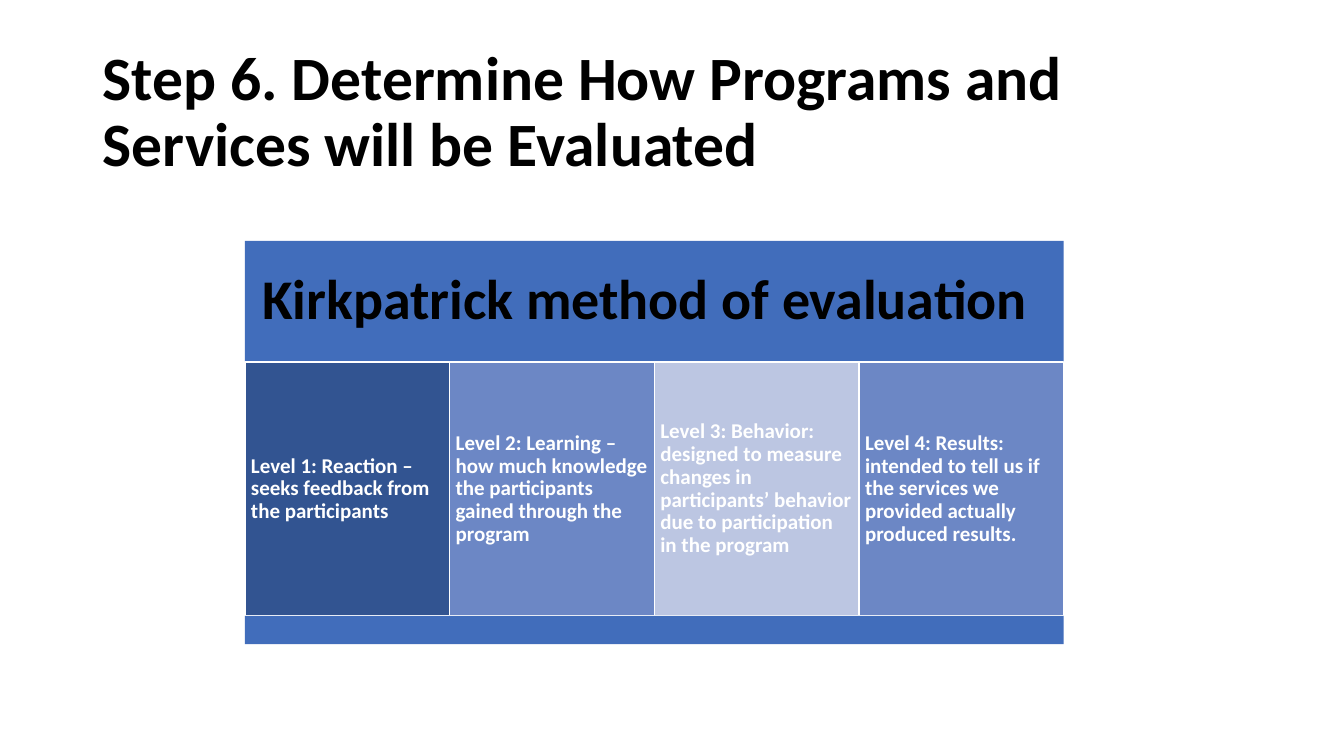
from pptx import Presentation
from pptx.dml.color import RGBColor
from pptx.enum.shapes import MSO_SHAPE
from pptx.enum.text import MSO_ANCHOR, MSO_AUTO_SIZE, PP_ALIGN
from pptx.util import Pt

RECT = MSO_SHAPE.RECTANGLE
MIDDLE = MSO_ANCHOR.MIDDLE
NO_FIT = MSO_AUTO_SIZE.NONE
LEFT = PP_ALIGN.LEFT

BLACK = RGBColor(0x00, 0x00, 0x00)
WHITE = RGBColor(0xFF, 0xFF, 0xFF)
BLUE = RGBColor(0x41, 0x6D, 0xBB)
NAVY = RGBColor(0x32, 0x54, 0x91)
MID = RGBColor(0x6C, 0x87, 0xC5)
PALE = RGBColor(0xBC, 0xC6, 0xE2)

EDGE, TOP, STEP = 243, 239, 203
HEAD, BODY, FOOT = 120, 252, 28

LEVELS = [
    (NAVY, "Level 1: Reaction – seeks feedback from the participants"),
    (MID, "Level 2: Learning – how much knowledge the participants "
          "gained through the program"),
    (PALE, "Level 3: Behavior: designed to measure changes in participants’ "
           "behavior due to participation in the program"),
    (MID, "Level 4: Results: intended to tell us if the services "
          "we provided actually produced results."),
]


def px(count):
    """Turn px, 100 to the inch, into EMU."""
    return count * 9144


def style(item, values):
    """Set each named value on the item."""
    for name, value in values.items():
        setattr(item, name, value)


def write(shape, text, size, color, inset):
    """Put bold, left-aligned text in a shape."""
    frame = shape.text_frame
    gap = px(inset)
    style(frame, {"word_wrap": True, "auto_size": NO_FIT,
                  "vertical_anchor": MIDDLE, "margin_left": gap,
                  "margin_right": gap, "margin_top": gap,
                  "margin_bottom": gap})
    para = frame.paragraphs[0]
    style(para, {"alignment": LEFT, "line_spacing": 0.9})
    run = para.add_run()
    run.text = text
    style(run.font, {"name": "Calibri", "size": Pt(size), "bold": True})
    run.font.color.rgb = color


def add_box(slide, box, fill, line=None):
    """Add a filled rectangle, with an outline if a line colour is given."""
    shape = slide.shapes.add_shape(RECT, *map(px, box))
    shape.shadow.inherit = False
    shape.fill.solid()
    shape.fill.fore_color.rgb = fill
    if line is None:
        shape.line.fill.background()
    else:
        shape.line.color.rgb = line
        shape.line.width = Pt(1)
    return shape


def add_title(slide, text):
    """Place and fill the title."""
    title = slide.shapes.title
    style(title, {"left": px(92), "top": px(40),
                  "width": px(1150), "height": px(145)})
    write(title, text, 44, BLACK, 10)


def main():
    """Build and save the slide."""
    deck = Presentation()
    style(deck, {"slide_width": px(1333), "slide_height": px(750)})
    slide = deck.slides.add_slide(deck.slide_layouts[5])
    add_title(slide, "Step 6. Determine How Programs and "
                     "Services will be Evaluated")

    wide = STEP * len(LEVELS)
    head = add_box(slide, (EDGE, TOP, wide, HEAD), BLUE)
    write(head, "Kirkpatrick method of evaluation", 40, BLACK, 17)
    row = TOP + HEAD
    for i, (fill, text) in enumerate(LEVELS):
        cell = add_box(slide, (EDGE + i * STEP, row, STEP, BODY), fill, WHITE)
        write(cell, text, 15, WHITE, 6)
    add_box(slide, (EDGE, row + BODY, wide, FOOT), BLUE)
    deck.save("out.pptx")


if __name__ == "__main__":
    main()
